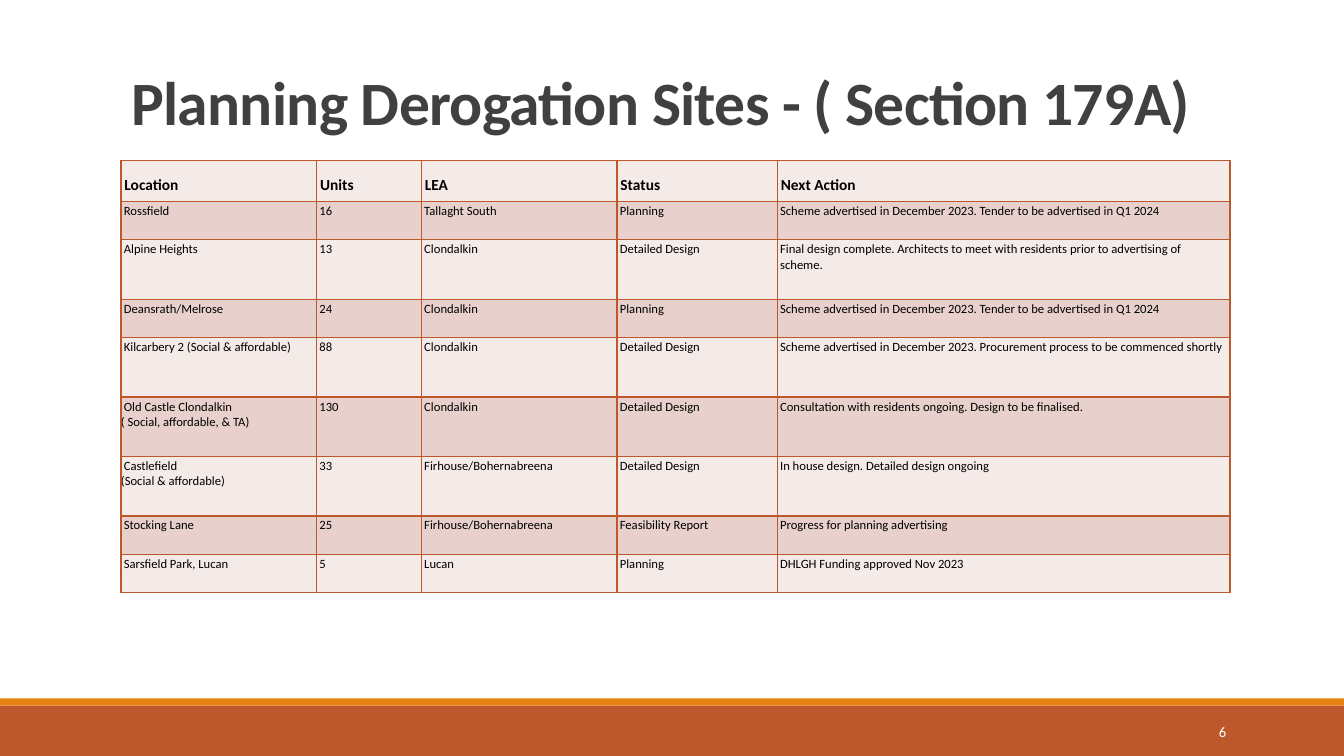
"""Build the slide that lists the planning derogation sites."""
from lxml import etree
from pptx import Presentation
from pptx import util as u
from pptx.dml import color
from pptx.enum import shapes, text
from pptx.oxml import ns

RUST, AMBER, PALE, ROSE = "BD582C", "E48312", "F4EAE8", "E8D1CD"
BLACK, GREY, WHITE = "000000", "404040", "FFFFFF"

WIDTHS = [1.94, 1.04, 1.94, 1.59, 4.49]
HEIGHTS = [0.41, 0.38, 0.59, 0.38, 0.59, 0.59, 0.59, 0.38, 0.38]
ADVERT = "Scheme advertised in December 2023. Tender to be advertised in Q1 2024"
SITES = [
    ["Location", "Units", "LEA", "Status", "Next Action"],
    ["Rossfield", "16", "Tallaght South", "Planning", ADVERT],
    ["Alpine Heights", "13", "Clondalkin", "Detailed Design",
     "Final design complete. Architects to meet with residents prior to advertising of\n scheme."],
    ["Deansrath/Melrose", "24", "Clondalkin", "Planning", ADVERT],
    ["Kilcarbery 2 (Social & affordable)", "88", "Clondalkin", "Detailed Design",
     "Scheme advertised in December 2023. Procurement process to be commenced shortly"],
    ["Old Castle Clondalkin\n( Social, affordable, & TA)", "130", "Clondalkin", "Detailed Design",
     "Consultation with residents ongoing. Design to be finalised."],
    ["Castlefield\n(Social & affordable)", "33", "Firhouse/Bohernabreena", "Detailed Design",
     "In house design. Detailed design ongoing"],
    ["Stocking Lane", "25", "Firhouse/Bohernabreena", "Feasibility Report",
     "Progress for planning advertising"],
    ["Sarsfield Park, Lucan", "5", "Lucan", "Planning", "DHLGH Funding approved Nov 2023"],
]


def paint(code):
    return color.RGBColor.from_string(code)


def write(frame, words, size=9, ink=BLACK, bold=False, align=text.PP_ALIGN.LEFT,
          space=1.0, after=0, track=0):
    frame.word_wrap = True
    for i, line in enumerate(words.split("\n")):
        para = frame.paragraphs[0] if i == 0 else frame.add_paragraph()
        para.alignment, para.line_spacing = align, space
        para.space_before, para.space_after = u.Pt(0), u.Pt(after)
        run = para.add_run()
        run.text = line
        font = run.font
        font.name, font.size, font.bold = "Calibri", u.Pt(size), bold
        font.color.rgb = paint(ink)
        if track:
            font._element.set("spc", str(round(track * 100)))


class Deck:
    def __init__(self):
        self.deck = Presentation()
        self.deck.slide_width, self.deck.slide_height = u.Inches(13.33), u.Inches(7.5)
        self.slide = self.deck.slides.add_slide(self.deck.slide_layouts[5])

    def band(self, top, height, fill):
        bar = self.slide.shapes.add_shape(
            shapes.MSO_SHAPE.RECTANGLE, 0, u.Inches(top), self.deck.slide_width, u.Inches(height))
        bar.shadow.inherit = False
        bar.fill.solid()
        bar.fill.fore_color.rgb = paint(fill)
        bar.line.fill.background()

    def title(self, words, *box):
        head = self.slide.shapes.title
        head.left, head.top, head.width, head.height = map(u.Inches, box)
        frame = head.text_frame
        frame.auto_size = text.MSO_AUTO_SIZE.NONE
        frame.vertical_anchor = text.MSO_ANCHOR.BOTTOM
        write(frame, words, size=44, ink=GREY, bold=True, space=0.85, track=-0.5)

    def label(self, words, *box, **style):
        frame = self.slide.shapes.add_textbox(*map(u.Inches, box)).text_frame
        frame.vertical_anchor = text.MSO_ANCHOR.MIDDLE
        write(frame, words, **style)

    def edge(self, cell):
        props = cell._tc.get_or_add_tcPr()
        for i, side in enumerate(("lnL", "lnR", "lnT", "lnB")):
            line = etree.Element(ns.qn(f"a:{side}"), w=str(u.Pt(1)))
            fill = etree.SubElement(line, ns.qn("a:solidFill"))
            etree.SubElement(fill, ns.qn("a:srgbClr"), val=RUST)
            props.insert(i, line)

    def table(self, rows, left, top):
        grid = self.slide.shapes.add_table(
            len(rows), len(WIDTHS), u.Inches(left), u.Inches(top),
            u.Inches(sum(WIDTHS)), u.Inches(sum(HEIGHTS))).table
        for col, width in zip(grid.columns, WIDTHS):
            col.width = u.Inches(width)
        for r, row in enumerate(rows):
            grid.rows[r].height = u.Inches(HEIGHTS[r])
            head = r == 0
            for c, words in enumerate(row):
                cell = grid.cell(r, c)
                cell.margin_left, cell.margin_right = u.Inches(0), u.Inches(0.06)
                cell.margin_top = u.Inches(0.01 if head else 0.02)
                cell.margin_bottom = u.Inches(0.07)
                cell.vertical_anchor = text.MSO_ANCHOR.BOTTOM if head else text.MSO_ANCHOR.TOP
                cell.fill.solid()
                cell.fill.fore_color.rgb = paint(ROSE if r % 2 else PALE)
                self.edge(cell)
                write(cell.text_frame, f" {words}", size=11 if head else 9, bold=head)


def main():
    page = Deck()
    page.band(7, 0.5, RUST)
    page.band(6.93, 0.07, AMBER)
    page.title("Planning Derogation Sites - ( Section 179A)", 1.2, 0.31, 11, 1.11)
    page.label("6", 10.83, 7.06, 1.43, 0.4, size=10.5, ink=WHITE,
               align=text.PP_ALIGN.RIGHT, after=6)
    page.table(SITES, 1.2, 1.59)
    page.deck.save("out.pptx")


if __name__ == "__main__":
    main()
